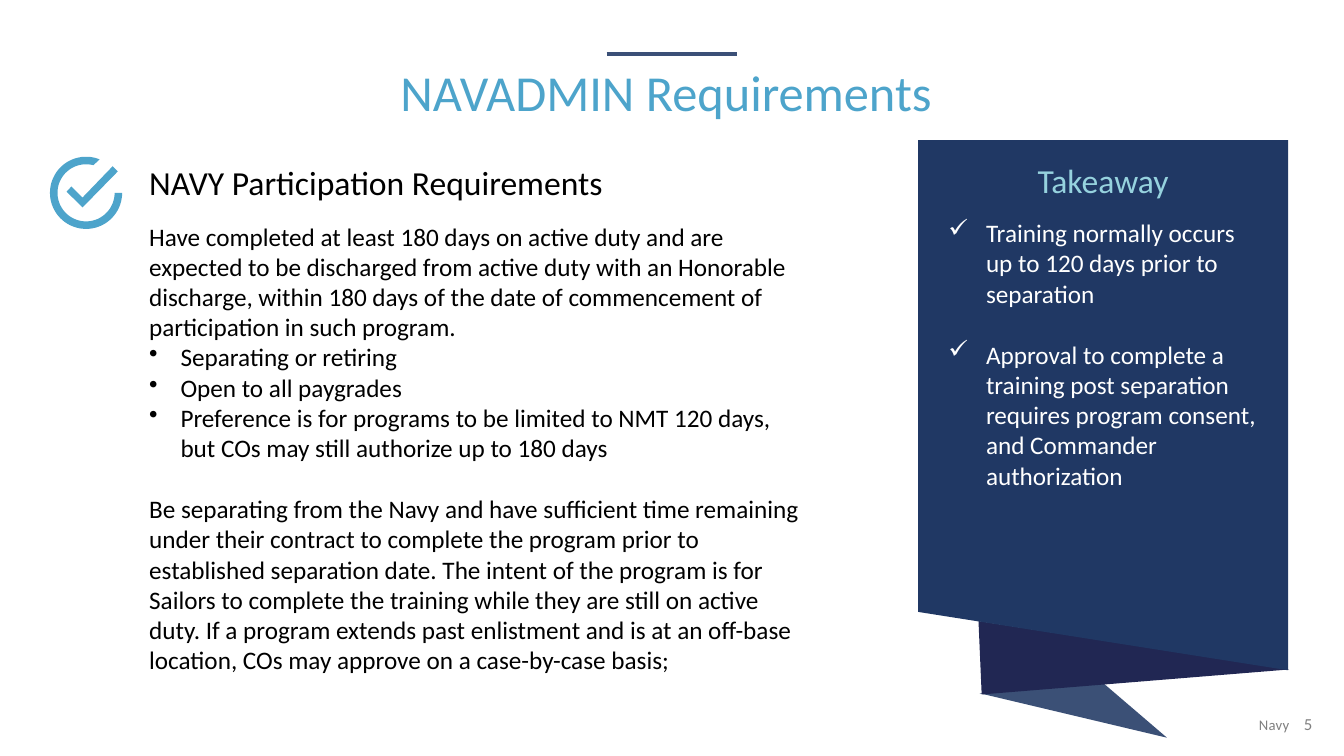
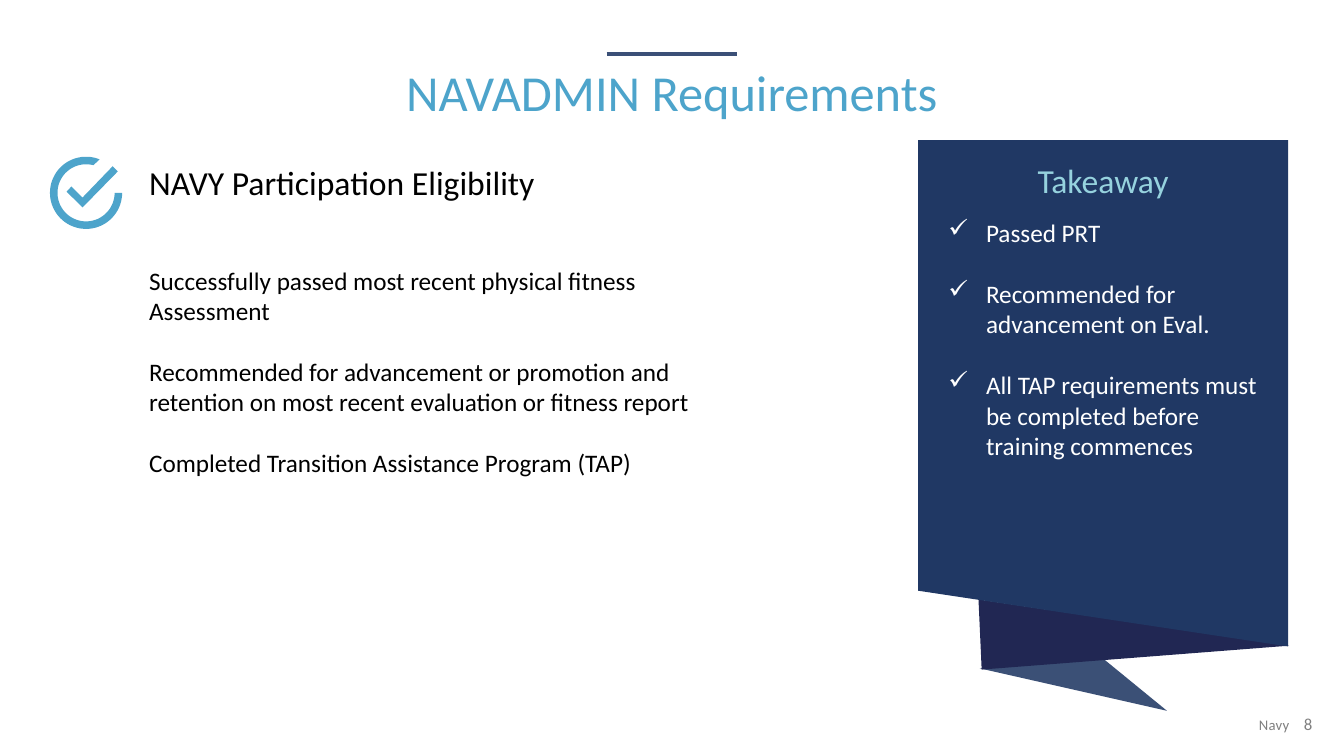
from dataclasses import dataclass
from math import cos, radians, sin

from lxml import etree
from pptx import Presentation
from pptx.dml.color import RGBColor
from pptx.enum.shapes import MSO_CONNECTOR
from pptx.enum.text import MSO_ANCHOR, PP_ALIGN
from pptx.oxml.ns import qn
from pptx.util import Cm, Pt

STRAIGHT = MSO_CONNECTOR.STRAIGHT
TOP = MSO_ANCHOR.TOP
LEFT, CENTER, RIGHT = PP_ALIGN.LEFT, PP_ALIGN.CENTER, PP_ALIGN.RIGHT

FONT = "Calibri"
COLORS = {
    "text": "000000",
    "footer": "808080",
    "accent": "4DA4CB",
    "rule": "3B5077",
    "panel": "203864",
    "fold": "212753",
    "takeaway": "96D2DE",
    "white": "FFFFFF",
}
BLANK_LINE = 22
RIBBON_TOP = 3.53
TAIL = [(24.69, 13.94), (27.81, 13.69), (29.41, 15.06)]
FOLD = [(24.66, 12.12), (32.49, 13.34), (24.74, 13.97)]
PANEL = [(32.46, 13.36), (23.14, 11.89), (23.14, 0), (32.46, 0)]
TICK = [(2.84, 4.19), (2.97, 4.32), (2.08, 5.23),
        (1.68, 4.83), (1.8, 4.7), (2.08, 4.98)]
RING_CENTER = (2.17, 4.86)

Points = list[tuple[float, float]]


@dataclass(frozen=True)
class Line:
    text: str
    bullet: str = ""
    before: float = 0


@dataclass(frozen=True)
class Requirements:
    title: str
    heading: str
    body_top: float
    body_height: float
    body: list[Line]
    takeaways: list[str]
    ribbon_scale: float
    number: str


PAGES = [
    Requirements(
        title="NAVADMIN Requirements ",
        heading="NAVY Participation Requirements",
        body_top=5.44,
        body_height=11.79,
        body=[
            Line("Have completed at least 180 days on active duty and are expected to be "
                 "discharged from active duty with an Honorable discharge, within 180 days "
                 "of the date of commencement of participation in such program."),
            Line("Separating or retiring", "•"),
            Line("Open to all paygrades", "•"),
            Line("Preference is for programs to be limited to NMT 120 days, "
                 "but COs may still authorize up to 180 days", "•"),
            Line("Be separating from the Navy and have sufficient time remaining under "
                 "their contract to complete the program prior to established separation "
                 "date. The intent of the program is for Sailors to complete the training "
                 "while they are still on active duty. If a program extends past enlistment "
                 "and is at an off-base location, COs may approve on a case-by-case basis;",
                 before=BLANK_LINE),
        ],
        takeaways=[
            "Training normally occurs up to 120 days prior to separation",
            "Approval to complete a training post separation requires program consent, "
            "and Commander authorization",
        ],
        ribbon_scale=1,
        number="5",
    ),
    Requirements(
        title="NAVADMIN Requirements",
        heading="NAVY Participation Eligibility",
        body_top=6.55,
        body_height=5.64,
        body=[
            Line("Successfully passed most recent physical fitness"),
            Line("Assessment"),
            Line("Recommended for advancement or promotion and", before=BLANK_LINE),
            Line("retention on most recent evaluation or fitness report"),
            Line("Completed Transition Assistance Program (TAP)", before=BLANK_LINE),
        ],
        takeaways=[
            "Passed PRT",
            "Recommended for advancement on Eval.",
            "All TAP requirements must be completed before training commences",
        ],
        ribbon_scale=0.955,
        number="8",
    ),
]


def rgb(name: str) -> RGBColor:
    return RGBColor.from_string(COLORS[name])


def write(frame, text: str, *, size: float = 18, color: str = "text", align=LEFT,
          bullet: str = "", indent: float = 0.79, before: float = 0,
          after: float = 0, line_spacing: float = 1, tracking: int = 0) -> None:
    first = frame.paragraphs[0]
    paragraph = frame.add_paragraph() if first.runs else first
    paragraph.alignment = align
    paragraph.line_spacing = line_spacing
    paragraph.space_before = Pt(before)
    paragraph.space_after = Pt(after)
    if bullet:
        properties = paragraph._p.get_or_add_pPr()
        properties.set("marL", str(Cm(indent)))
        properties.set("indent", str(-Cm(indent)))
        etree.SubElement(properties, qn("a:buChar"), char=bullet)
    run = paragraph.add_run()
    run.text = text
    run.font.name = FONT
    run.font.size = Pt(size)
    run.font.color.rgb = rgb(color)
    if tracking:
        run._r.get_or_add_rPr().set("spc", str(tracking))


def text_area(slide, left: float, top: float, width: float, height: float):
    frame = slide.shapes.add_textbox(Cm(left), Cm(top), Cm(width), Cm(height)).text_frame
    frame.word_wrap = True
    frame.vertical_anchor = TOP
    return frame


def draw_outline(shapes, color: str, *contours: Points, opacity: int = 100):
    builder = None
    for contour in contours:
        start, *rest = [(Cm(x), Cm(y)) for x, y in contour]
        if builder is None:
            builder = shapes.build_freeform(*start)
        else:
            builder.move_to(*start)
        builder.add_line_segments(rest, close=True)
    outline = builder.convert_to_shape()
    outline.shadow.inherit = False
    outline.line.fill.background()
    outline.fill.solid()
    outline.fill.fore_color.rgb = rgb(color)
    if opacity < 100:
        tint = outline._element.spPr.find(qn("a:solidFill"))[0]
        etree.SubElement(tint, qn("a:alpha"), val=str(opacity * 1000))
    return outline


def arc(radius: float, end: int) -> Points:
    x, y = RING_CENTER
    steps = 60
    angles = [radians(end * step / steps) for step in range(steps + 1)]
    return [(x + radius * cos(a), y + radius * sin(a)) for a in angles]


def draw_check_icon(slide) -> None:
    ring = arc(0.91, 292) + arc(0.72, 285)[::-1]
    draw_outline(slide.shapes, "accent", TICK, ring)


def draw_takeaways(slide, page: Requirements) -> None:
    def scaled(points: Points) -> Points:
        return [(x, RIBBON_TOP + y * page.ribbon_scale) for x, y in points]

    ribbon = slide.shapes.add_group_shape().shapes
    draw_outline(ribbon, "panel", scaled(TAIL), opacity=88)
    draw_outline(ribbon, "fold", scaled(FOLD))
    frame = draw_outline(ribbon, "panel", scaled(PANEL)).text_frame
    frame.word_wrap = True
    frame.vertical_anchor = TOP
    frame.margin_left = frame.margin_right = Cm(0.76)
    frame.margin_top = frame.margin_bottom = Cm(0.51)
    write(frame, "Takeaway", size=24, color="takeaway", align=CENTER, after=12)
    for index, takeaway in enumerate(page.takeaways):
        write(frame, takeaway, color="white", bullet="✓", indent=0.95,
              before=BLANK_LINE if index else 0)


def draw_frame(slide, page: Requirements) -> None:
    write(text_area(slide, 27.25, 17.91, 5.49, 1.02), "Navy",
          size=10.5, color="footer", align=RIGHT, tracking=20)
    write(text_area(slide, 32.61, 17.86, 1.12, 1.02), page.number,
          size=12, color="footer")
    rule = slide.shapes.add_connector(STRAIGHT, Cm(15.29), Cm(1.37), Cm(18.57), Cm(1.37))
    rule.line.color.rgb = rgb("rule")
    rule.line.width = Pt(3)
    etree.SubElement(rule._element.spPr, qn("a:effectLst"))
    write(text_area(slide, 9.53, 1.6, 14.81, 1.42), page.title,
          size=36, color="accent", align=CENTER, line_spacing=0.9)


def draw_page(deck, page: Requirements) -> None:
    slide = deck.slides.add_slide(deck.slide_layouts[6])
    draw_frame(slide, page)
    write(text_area(slide, 3.51, 3.96, 16.92, 1.27), page.heading, size=24)
    body = text_area(slide, 3.51, page.body_top, 16.92, page.body_height)
    for line in page.body:
        write(body, line.text, bullet=line.bullet, before=line.before)
    draw_takeaways(slide, page)
    draw_check_icon(slide)


def main() -> None:
    deck = Presentation()
    deck.slide_width, deck.slide_height = Cm(33.87), Cm(19.05)
    for page in PAGES:
        draw_page(deck, page)
    deck.save("out.pptx")


if __name__ == "__main__":
    main()
